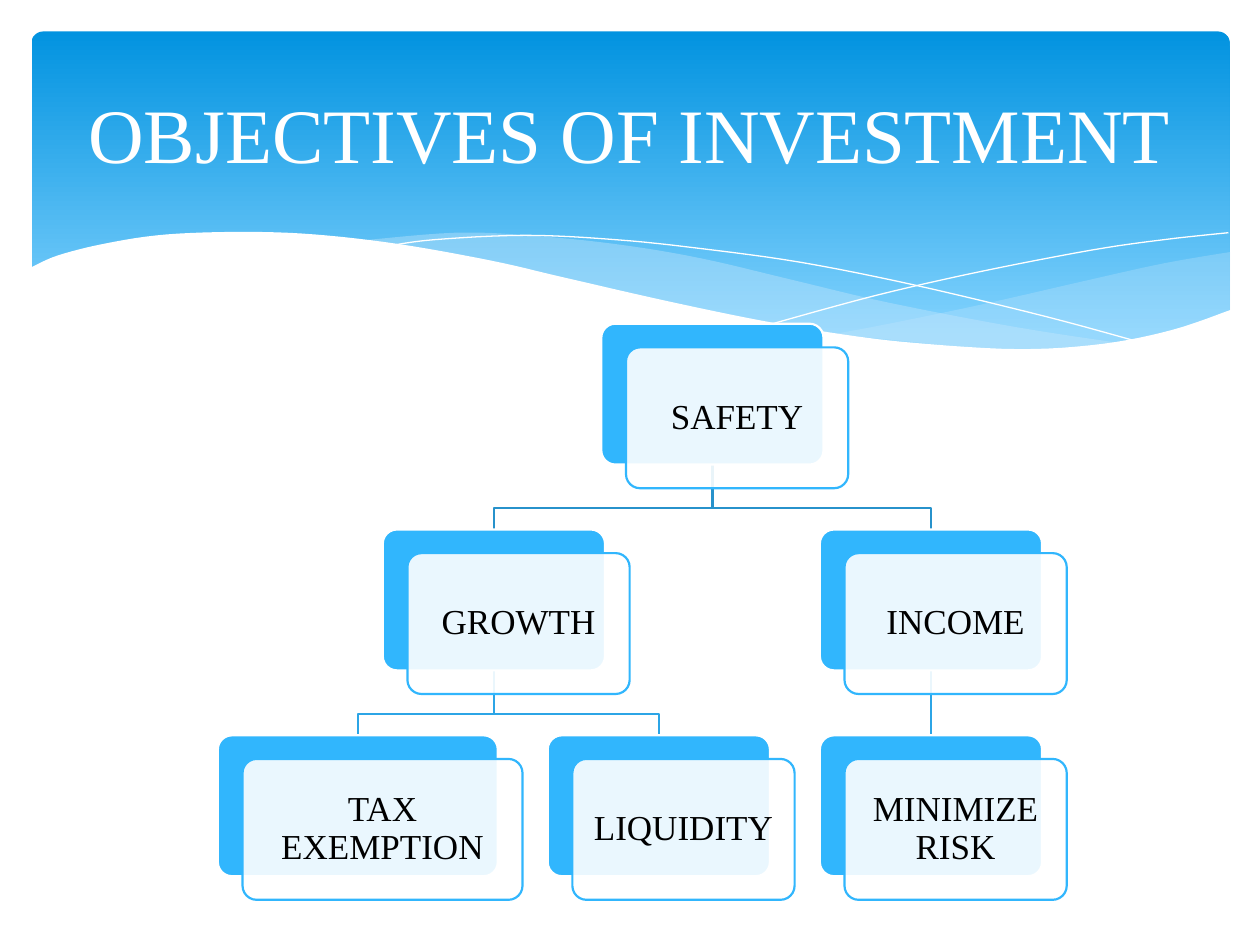
from dataclasses import dataclass, field
from lxml.etree import SubElement
from pptx import Presentation
from pptx.dml.color import RGBColor
from pptx.enum.shapes import MSO_CONNECTOR, MSO_SHAPE
from pptx.enum.text import MSO_ANCHOR, PP_ALIGN
from pptx.oxml.ns import qn
from pptx.util import Pt

FONT = "Times New Roman"
COLOURS = {
    "white": "FFFFFF", "black": "000000", "card": "31B6FD",
    "banner_top": "0293E0", "banner_bottom": "83D3FE", "veil": "C6E7FC",
    "upper_link": "2792CB", "lower_link": "2CA5E6",
}
CARD_WIDTH, CARD_HEIGHT = 127, 80.5
FRONT_X, FRONT_Y = 14.1, 13.5
TREE_LEFT, TREE_TOP = 124.5, 185
LEAF_GAP, LEVEL_STEP = 28.5, 117.6
BEND = 25

RIGHT_VEIL = [(703, 144), (665, 150.5), (620, 160.5), (561, 174), (508, 185), (476, 191)]
RIGHT_VEIL_EDGE = [(476, 191), (518, 195), (562, 199.5), (601, 200), (640, 196),
                   (673, 188.5), (703, 178)]
LEFT_VEIL = [(643, 196.5), (581, 187), (508, 173), (453, 160), (400, 147.5),
             (352, 139.5), (302, 134.5), (260, 133), (206, 137.5)]
LEFT_VEIL_EDGE = [(206, 137.5), (261, 146), (323, 160), (382, 173), (445, 186),
                  (500, 194.5), (548, 199), (596, 200), (643, 196.5)]
FALLING_LINE = [(222.5, 140.5), (248, 137), (300, 134.5), (352, 137), (400, 142),
                (458, 150), (523, 163), (598, 181), (653, 196)]
RISING_LINE = [(441.5, 185), (500, 169), (559, 155.5), (623.5, 143), (665, 137), (702, 133)]
WHITE_WAVE = [(16.5, 153.5), (33, 146), (61, 139), (95, 134), (139, 132.5), (180, 134),
              (228, 139.5), (281, 149), (322, 158.5), (381, 172), (434, 183), (481, 191),
              (523, 196), (582, 199.5), (630, 196.5), (670, 188.5), (703.5, 177)]


@dataclass
class Node:
    label: str
    children: list = field(default_factory=list)
    width: float = CARD_WIDTH
    left: float = 0
    top: float = 0

    @property
    def centre(self):
        return self.left + self.width / 2


def place(node, cursor, level=0):
    node.top = TREE_TOP + level * LEVEL_STEP
    if not node.children:
        node.left = cursor
        return cursor + node.width + LEAF_GAP
    for child in node.children:
        cursor = place(child, cursor, level + 1)
    first, last = node.children[0], node.children[-1]
    node.left = (first.left + last.left + last.width - node.width) / 2
    return cursor


def walk(node, level=0):
    yield node, level
    for child in node.children:
        yield from walk(child, level + 1)


def smooth_curve(knots, steps=6):
    padded = [knots[0], *knots, knots[-1]]
    points = []
    for a, b, c, d in zip(padded, padded[1:], padded[2:], padded[3:]):
        for step in range(steps):
            t = step / steps
            points.append(tuple(
                q + t * (r - p) / 2 + t**2 * (2 * p - 5 * q + 4 * r - s) / 2
                + t**3 * (3 * q - p - 3 * r + s) / 2
                for p, q, r, s in zip(a, b, c, d)))
    return points + [knots[-1]]


class SlideBuilder:
    def __init__(self, slide):
        self.slide = slide

    def colour(self, name):
        return RGBColor.from_string(COLOURS[name])

    def style(self, shape, fill=None, opacity=100, line=None, weight=1.25):
        shape.shadow.inherit = False
        if fill:
            shape.fill.solid()
            shape.fill.fore_color.rgb = self.colour(fill)
            if opacity < 100:
                colour = shape._element.spPr.find(qn("a:solidFill"))[0]
                SubElement(colour, qn("a:alpha"), val=str(opacity * 1000))
        else:
            shape.fill.background()
        if line:
            shape.line.color.rgb = self.colour(line)
            shape.line.width = Pt(weight)
        else:
            shape.line.fill.background()

    def rounded(self, left, top, width, height, radius, **style):
        shape = self.slide.shapes.add_shape(
            MSO_SHAPE.ROUNDED_RECTANGLE, Pt(left), Pt(top), Pt(width), Pt(height))
        shape.adjustments[0] = radius
        self.style(shape, **style)
        return shape

    def banner(self):
        shape = self.rounded(18, 18, 684.7, 194.4, 0.034)
        shape.fill.gradient()
        shape.fill.gradient_angle = 270
        stops = zip(shape.fill.gradient_stops, (0, 0.9), ("banner_top", "banner_bottom"))
        for stop, position, name in stops:
            stop.position = position
            stop.color.rgb = self.colour(name)

    def outline(self, points, close=False, **style):
        start, *rest = [(Pt(x), Pt(y)) for x, y in points]
        builder = self.slide.shapes.build_freeform(*start)
        builder.add_line_segments(rest, close=close)
        self.style(builder.convert_to_shape(), **style)

    def link(self, parent, child, colour):
        start_y = parent.top + CARD_HEIGHT
        x, end_x = parent.centre, child.centre
        if abs(x - end_x) > 1:
            bend_y = start_y + BEND
            self.outline([(x, start_y), (x, bend_y), (end_x, bend_y), (end_x, child.top)],
                         line=colour)
            return
        connector = self.slide.shapes.add_connector(
            MSO_CONNECTOR.STRAIGHT, Pt(x), Pt(start_y), Pt(end_x), Pt(child.top))
        connector.line.color.rgb = self.colour(colour)
        connector.line.width = Pt(1.25)
        SubElement(connector._element.spPr, qn("a:effectLst"))

    def set_text(self, shape, text, size, colour, inset, spacing=1.0):
        frame = shape.text_frame
        frame.text = text
        frame.word_wrap = True
        frame.vertical_anchor = MSO_ANCHOR.MIDDLE
        frame.margin_left = frame.margin_right = Pt(inset)
        frame.margin_top = frame.margin_bottom = Pt(inset)
        paragraph = frame.paragraphs[0]
        paragraph.alignment = PP_ALIGN.CENTER
        paragraph.line_spacing = spacing
        font = paragraph.runs[0].font
        font.name, font.size = FONT, Pt(size)
        font.color.rgb = self.colour(colour)

    def card(self, node):
        self.rounded(node.left, node.top, node.width, CARD_HEIGHT, 0.1,
                     fill="card", line="white")
        front = self.rounded(node.left + FRONT_X, node.top + FRONT_Y, node.width, CARD_HEIGHT,
                             0.1, fill="white", opacity=90, line="card")
        self.set_text(front, node.label, 20, "black", inset=8, spacing=0.9)

    def title(self, text):
        box = self.slide.shapes.add_textbox(Pt(36), Pt(26.6), Pt(648), Pt(98.6))
        self.set_text(box, text, 44, "white", inset=5)


def main():
    presentation = Presentation()
    presentation.slide_width, presentation.slide_height = Pt(720), Pt(540)
    builder = SlideBuilder(presentation.slides.add_slide(presentation.slide_layouts[6]))

    builder.banner()
    for top, edge, opacity in ((RIGHT_VEIL, RIGHT_VEIL_EDGE, 29),
                               (LEFT_VEIL, LEFT_VEIL_EDGE, 40)):
        builder.outline(smooth_curve(top) + smooth_curve(edge), close=True,
                        fill="veil", opacity=opacity)
    for knots in (FALLING_LINE, RISING_LINE):
        builder.outline(smooth_curve(knots), line="white", weight=0)
    builder.outline(smooth_curve(WHITE_WAVE) + [(703.5, 237), (16.5, 237)], close=True,
                    fill="white")

    tree = Node("SAFETY", [
        Node("GROWTH", [Node("TAX EXEMPTION", width=160), Node("LIQUIDITY")]),
        Node("INCOME", [Node("MINIMIZE RISK")]),
    ])
    place(tree, TREE_LEFT)
    for node, level in walk(tree):
        for child in node.children:
            builder.link(node, child, "lower_link" if level else "upper_link")
    for node, level in walk(tree):
        builder.card(node)
    builder.title("OBJECTIVES OF INVESTMENT")
    presentation.save("out.pptx")


if __name__ == "__main__":
    main()
